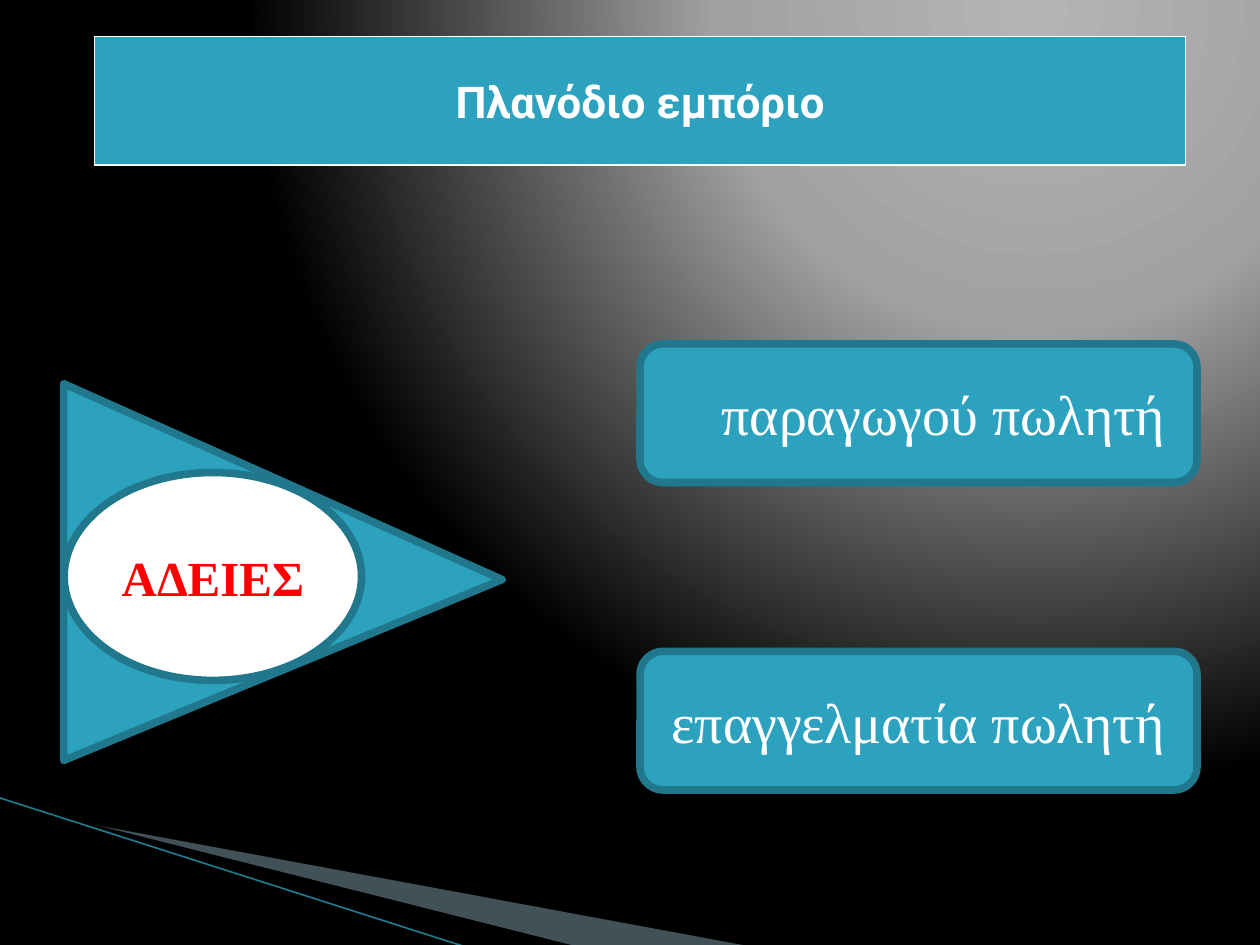
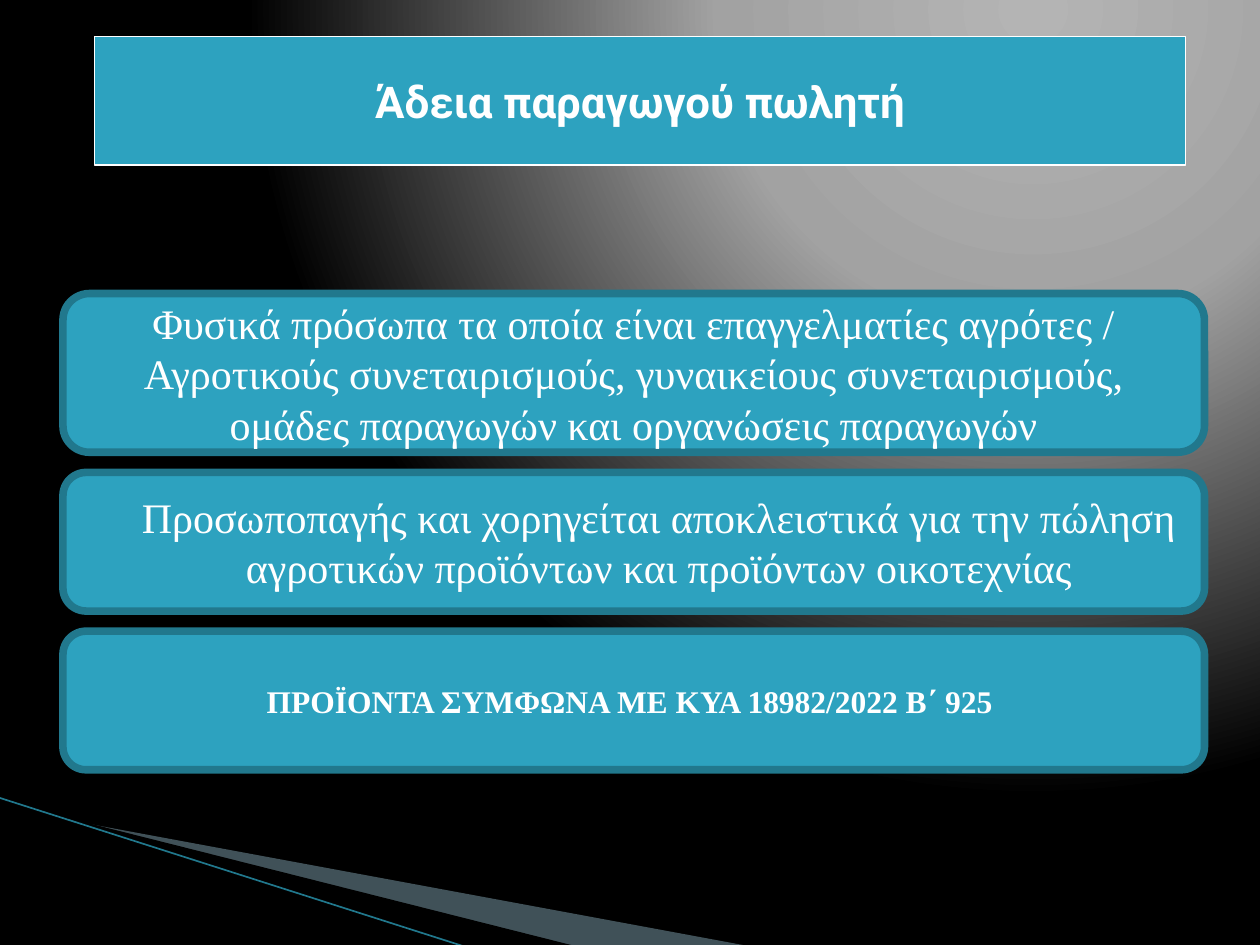
"""Build two slides on itinerant trade licences."""
from pptx import Presentation
from pptx.dml.color import RGBColor
from pptx.enum.shapes import MSO_CONNECTOR, MSO_SHAPE
from pptx.enum.text import MSO_ANCHOR, MSO_AUTO_SIZE, PP_ALIGN
from pptx.oxml import parse_xml
from pptx.oxml.ns import nsdecls
from pptx.oxml.xmlchemy import OxmlElement
from pptx.util import Inches, Pt

RECT, ROUND = MSO_SHAPE.RECTANGLE, MSO_SHAPE.ROUNDED_RECTANGLE
OVAL, TRIANGLE = MSO_SHAPE.OVAL, MSO_SHAPE.ISOSCELES_TRIANGLE
STRAIGHT = MSO_CONNECTOR.STRAIGHT
MIDDLE, CENTER, NO_FIT = MSO_ANCHOR.MIDDLE, PP_ALIGN.CENTER, MSO_AUTO_SIZE.NONE

TEAL, DARK_TEAL, PALE_BLUE = "2DA2BF", "21788D", "A0CBDC"
WHITE, BLACK, RED = "FFFFFF", "000000", "FF0000"
TITLE_FONT, BODY_FONT = "Roboto", "Times New Roman"
GLOW = [(0, "B4B4B4"), (40, "A2A2A2"), (100, BLACK)]
LIST_INDENT = 0.4


def rgb(value):
    """Return the colour for a hex string."""
    return RGBColor.from_string(value)


def set_background(master):
    """Give the master a round glow in the upper right."""
    stops = "".join(f'<a:gs pos="{pos * 1000}"><a:srgbClr val="{color}"/></a:gs>'
                    for pos, color in GLOW)
    master.background.fill.solid()
    solid = master.element.xpath(".//p:bgPr/a:solidFill")[0]
    solid.getparent().replace(solid, parse_xml(
        f'<a:gradFill {nsdecls("a")} rotWithShape="1"><a:gsLst>{stops}</a:gsLst>'
        '<a:path path="circle"><a:fillToRect l="65000" t="0" r="0" b="98000"/>'
        '</a:path></a:gradFill>'))


def write(sp, text, size, font=BODY_FONT, color=WHITE, bold=False, indent=0):
    """Write one centred paragraph into a shape."""
    tf = sp.text_frame
    tf.word_wrap, tf.auto_size, tf.vertical_anchor = True, NO_FIT, MIDDLE
    p = tf.paragraphs[0]
    p.alignment = CENTER
    if indent:
        pPr = p._p.get_or_add_pPr()
        pPr.set("marL", str(Inches(indent)))
        pPr.set("indent", "0")
    r = p.add_run()
    r.text = text
    r.font.name, r.font.size, r.font.bold = font, Pt(size), bold
    r.font.color.rgb = rgb(color)


def paint(sp, fill, line, width):
    """Set the fill and outline of a shape."""
    sp.fill.solid()
    sp.fill.fore_color.rgb = rgb(fill)
    sp.line.color.rgb = rgb(line)
    sp.line.width = Pt(width)


def add_panel(slide, kind, x, y, w, h, fill=TEAL):
    """Add a shape with the thick dark outline."""
    sp = slide.shapes.add_shape(kind, Inches(x), Inches(y), Inches(w), Inches(h))
    sp.shadow.inherit = False
    paint(sp, fill, DARK_TEAL, 4.33)
    return sp


def add_wedge(slide, points, color, alpha=100):
    """Add a closed outline without a border."""
    start, *rest = [(Inches(x), Inches(y)) for x, y in points]
    builder = slide.shapes.build_freeform(*start)
    builder.add_line_segments(rest)
    sp = builder.convert_to_shape()
    sp.shadow.inherit = False
    sp.fill.solid()
    sp.fill.fore_color.rgb = rgb(color)
    sp.line.fill.background()
    if alpha < 100:
        node = OxmlElement("a:alpha")
        node.set("val", str(alpha * 1000))
        sp._element.xpath("./p:spPr/a:solidFill/a:srgbClr")[0].append(node)


def add_corner(slide):
    """Add the wedges and the thin line at the lower left."""
    add_wedge(slide, [(0.55, 6.51), (5.95, 7.51), (4.56, 7.51), (0.55, 6.5)],
              PALE_BLUE, alpha=40)
    add_wedge(slide, [(0.53, 6.49), (4.57, 7.51), (3.72, 7.52), (0.54, 6.5)], BLACK)
    line = slide.shapes.add_connector(
        STRAIGHT, Inches(-0.01), Inches(6.33), Inches(3.71), Inches(7.52))
    line.line.color.rgb = rgb(DARK_TEAL)
    line.line.width = Pt(0.95)
    line._element.spPr.append(OxmlElement("a:effectLst"))


def add_slide(prs, title):
    """Add a slide with the corner art and the title band."""
    slide = prs.slides.add_slide(prs.slide_layouts[5])
    add_corner(slide)
    sp = slide.shapes.title
    sp.left, sp.top, sp.width, sp.height = map(Inches, (0.75, 0.29, 8.66, 1.02))
    paint(sp, TEAL, WHITE, 1)
    write(sp, title, 25, font=TITLE_FONT, bold=True)
    return slide


def build_licences(prs):
    """Build the slide that names the two licences."""
    slide = add_slide(prs, "Πλανόδιο εμπόριο")
    arrow = add_panel(slide, TRIANGLE, 0.75, 2.8, 2.99, 3.48)
    arrow.adjustments[0] = 0.52
    arrow.rotation = 90
    oval = add_panel(slide, OVAL, 0.51, 3.75, 2.36, 1.65, fill=WHITE)
    write(oval, "ΑΔΕΙΕΣ", 28, color=RED, bold=True)
    for y, text, indent in [(2.73, "παραγωγού πωλητή", LIST_INDENT),
                            (5.17, "επαγγελματία πωλητή", 0)]:
        write(add_panel(slide, ROUND, 5.08, y, 4.42, 1.1), text, 32, indent=indent)


def build_producer(prs):
    """Build the slide on the producer's licence."""
    slide = add_slide(prs, "Άδεια παραγωγού πωλητή")
    rows = [
        (1.26, "Φυσικά πρόσωπα τα οποία είναι επαγγελματίες αγρότες / Αγροτικούς "
               "συνεταιρισμούς, γυναικείους συνεταιρισμούς, ομάδες παραγωγών και "
               "οργανώσεις παραγωγών", dict(size=24)),
        (1.1, "Προσωποπαγής και χορηγείται αποκλειστικά για την πώληση αγροτικών "
              "προϊόντων και προϊόντων οικοτεχνίας",
         dict(size=24, indent=LIST_INDENT)),
        (1.1, "ΠΡΟΪΟΝΤΑ ΣΥΜΦΩΝΑ ΜΕ ΚΥΑ 18982/2022 Β΄ 925 ",
         dict(size=18, bold=True)),
    ]
    y, gap = 2.33, 0.16
    for height, text, style in rows:
        write(add_panel(slide, ROUND, 0.5, y, 9.06, height), text, **style)
        y += height + gap


def main():
    """Build and save the presentation."""
    prs = Presentation()
    prs.slide_width, prs.slide_height = Inches(10), Inches(7.5)
    set_background(prs.slide_master)
    build_licences(prs)
    build_producer(prs)
    prs.save("out.pptx")


if __name__ == "__main__":
    main()
